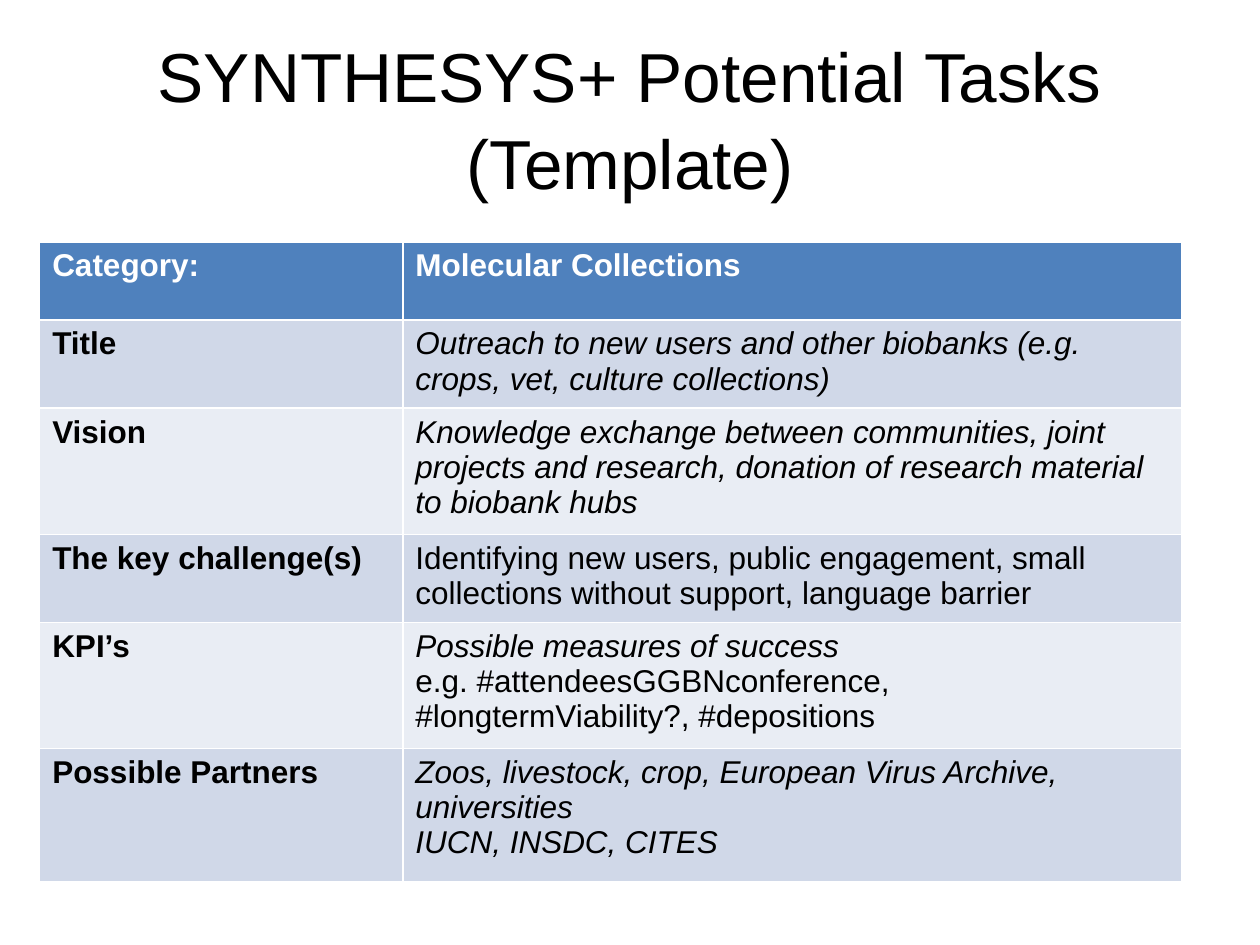
from pptx import Presentation
from pptx.dml.color import RGBColor
from pptx.enum.text import MSO_ANCHOR, PP_ALIGN
from pptx.util import Cm, Pt

CENTER = PP_ALIGN.CENTER
MIDDLE = MSO_ANCHOR.MIDDLE
BLACK = RGBColor(0, 0, 0)
WHITE = RGBColor(255, 255, 255)
BLUE = RGBColor(0x4F, 0x81, 0xBD)
BANDS = [RGBColor(0xE9, 0xED, 0xF4), RGBColor(0xD0, 0xD8, 0xE8)]
FONT = "Arial"

WIDTHS = [7.32, 15.7]
HEIGHTS = [1.57] * 5 + [2.69]
ROWS = [
    ("Category:", [("Molecular Collections", False)]),
    ("Title", [("Outreach to new users and other biobanks (e.g. crops, vet, "
                "culture collections)", True)]),
    ("Vision", [("Knowledge exchange between communities, joint projects and "
                 "research, donation of research material to biobank hubs", True)]),
    ("The key challenge(s)", [("Identifying new users, public engagement, small "
                               "collections without support, language barrier", False)]),
    ("KPI’s", [("Possible measures of success", True),
               ("e.g. #attendeesGGBNconference, #longtermViability?, "
                "#depositions", False)]),
    ("Possible Partners", [("Zoos, livestock, crop, European Virus Archive, "
                            "universities", True),
                           ("IUCN, INSDC, CITES", True)]),
]


def style(para, size, color, bold=False, italic=False):
    for run in para.runs:
        font = run.font
        font.name = FONT
        font.size = Pt(size)
        font.color.rgb = color
        font.bold = bold
        font.italic = italic


def add_title(slide, text):
    box = slide.shapes.add_textbox(Cm(1.27), Cm(0.76), Cm(22.86), Cm(3.18))
    frame = box.text_frame
    frame.word_wrap = True
    frame.vertical_anchor = MIDDLE
    frame.text = text
    para = frame.paragraphs[0]
    para.alignment = CENTER
    para.line_spacing = 1.04
    style(para, 39.6, BLACK)


def fill_cell(cell, lines, fill, color, bold):
    cell.fill.solid()
    cell.fill.fore_color.rgb = fill
    frame = cell.text_frame
    frame.text = "\n".join(text for text, _ in lines)
    for para, (_, italic) in zip(frame.paragraphs, lines):
        style(para, 18, color, bold, italic)


def add_tasks(slide):
    frame = slide.shapes.add_table(len(ROWS), len(WIDTHS), Cm(0.8), Cm(4.88),
                                   Cm(sum(WIDTHS)), Cm(sum(HEIGHTS)))
    table = frame.table
    for col, width in zip(table.columns, WIDTHS):
        col.width = Cm(width)
    for i, (label, lines) in enumerate(ROWS):
        table.rows[i].height = Cm(HEIGHTS[i])
        head = i == 0
        fill = BLUE if head else BANDS[i % 2]
        color = WHITE if head else BLACK
        fill_cell(table.cell(i, 0), [(label, False)], fill, color, True)
        fill_cell(table.cell(i, 1), lines, fill, color, head)


def main():
    deck = Presentation()
    deck.slide_width = Cm(25.4)
    deck.slide_height = Cm(19.05)
    slide = deck.slides.add_slide(deck.slide_layouts[6])
    add_title(slide, "SYNTHESYS+ Potential Tasks (Template)")
    add_tasks(slide)
    deck.save("out.pptx")


if __name__ == "__main__":
    main()
